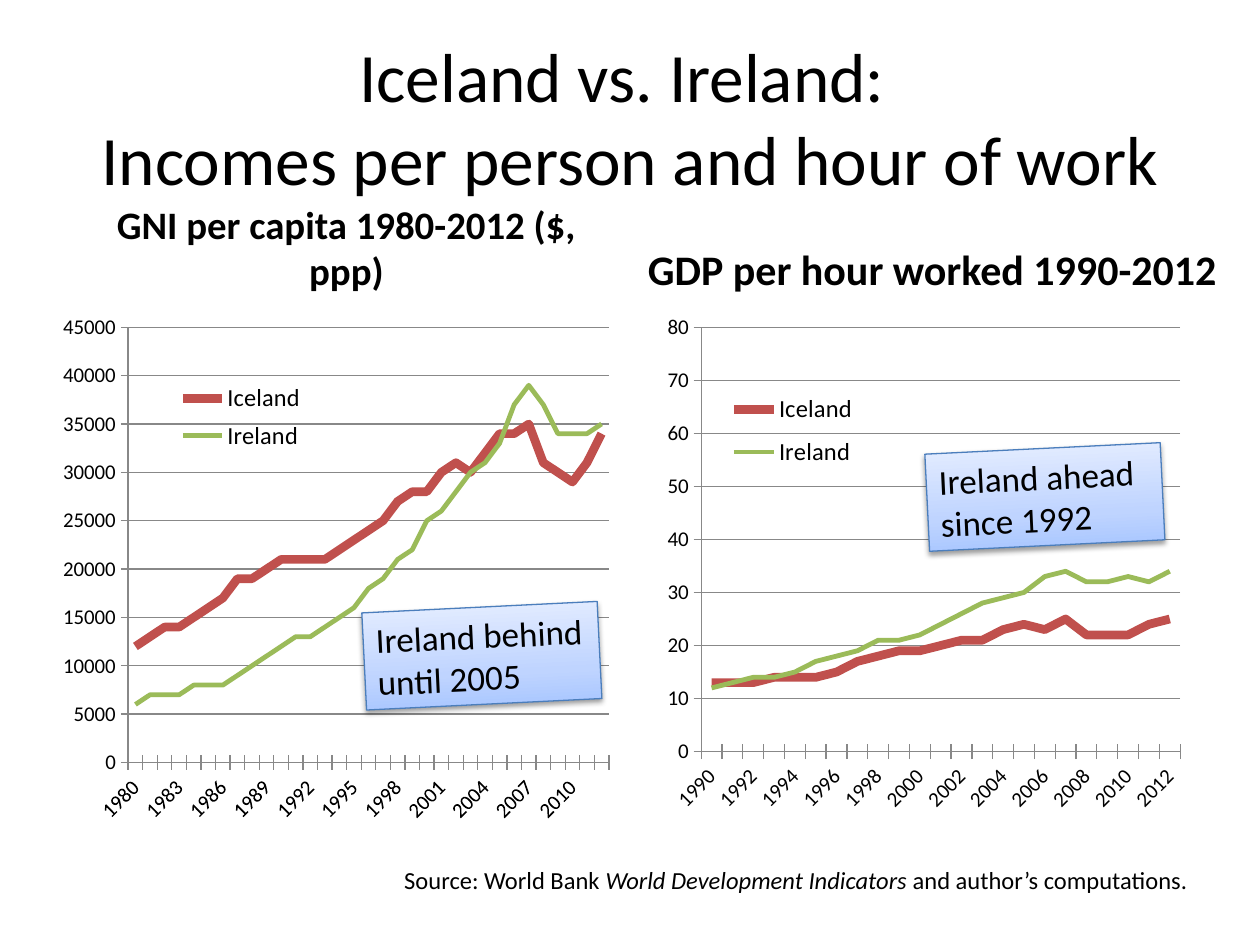
"""Builds a slide that compares incomes in Iceland and Ireland with two line charts."""
from lxml.etree import SubElement
from pptx import Presentation
from pptx.chart.data import CategoryChartData
from pptx.dml.color import RGBColor
from pptx.enum.chart import XL_CHART_TYPE as ChartType, XL_LEGEND_POSITION as LegendPos
from pptx.enum.chart import XL_TICK_MARK as TickMark
from pptx.enum.shapes import MSO_SHAPE as Shape
from pptx.enum.text import MSO_ANCHOR as Anchor, MSO_AUTO_SIZE as AutoSize, PP_ALIGN as Align
from pptx.oxml import parse_xml
from pptx.oxml.ns import qn
from pptx.util import Cm, Pt

FONT = "Calibri"
COLORS = {
    "text": "000000", "grid": "888888", "iceland": "C0504D", "ireland": "9BBB59",
    "edge": "4B7EBC", "low": "A4C4FF", "mid": "BFD4FF", "high": "E6EEFF",
}
GNI = {
    "Iceland": [12000, 13000, 14000, 14000, 15000, 16000, 17000, 19000, 19000, 20000, 21000,
                21000, 21000, 21000, 22000, 23000, 24000, 25000, 27000, 28000, 28000, 30000,
                31000, 30000, 32000, 34000, 34000, 35000, 31000, 30000, 29000, 31000, 34000],
    "Ireland": [6000, 7000, 7000, 7000, 8000, 8000, 8000, 9000, 10000, 11000, 12000,
                13000, 13000, 14000, 15000, 16000, 18000, 19000, 21000, 22000, 25000, 26000,
                28000, 30000, 31000, 33000, 37000, 39000, 37000, 34000, 34000, 34000, 35000],
}
GDP = {
    "Iceland": [13, 13, 13, 14, 14, 14, 15, 17, 18, 19, 19, 20,
                21, 21, 23, 24, 23, 25, 22, 22, 22, 24, 25],
    "Ireland": [12, 13, 14, 14, 15, 17, 18, 19, 21, 21, 22, 24,
                26, 28, 29, 30, 33, 34, 32, 32, 33, 32, 34],
}


def color(name):
    """Return a named colour."""
    return RGBColor.from_string(COLORS[name])


def style(font, size, bold=None):
    """Set the common font with a size and weight."""
    font.name, font.size, font.bold = FONT, Pt(size), bold
    font.color.rgb = color("text")


def fill_placeholder(sp, text, box, size, anchor, bold=None):
    """Move a placeholder and give it centred text."""
    sp.left, sp.top, sp.width, sp.height = (Cm(v) for v in box)
    tf = sp.text_frame
    tf.text = text
    tf.auto_size = AutoSize.NONE
    tf.vertical_anchor = anchor
    p = tf.paragraphs[0]
    p.alignment = Align.CENTER
    for r in p.runs:
        style(r.font, size, bold)


def add_source(s, parts, box):
    """Add the source line, with every second part in italics."""
    tf = s.shapes.add_textbox(*(Cm(v) for v in box)).text_frame
    tf.word_wrap = False
    tf.auto_size = AutoSize.SHAPE_TO_FIT_TEXT
    for i, part in enumerate(parts):
        r = tf.paragraphs[0].add_run()
        r.text = part
        style(r.font, 14)
        r.font.italic = i % 2 == 1


def set_layout(parent, index, box, inner=False):
    """Fix the place of a plot area or legend as fractions of the chart."""
    for old in parent.findall(qn("c:layout")):
        parent.remove(old)
    layout = parent.makeelement(qn("c:layout"))
    parent.insert(index, layout)
    manual = SubElement(layout, qn("c:manualLayout"))
    pairs = [("layoutTarget", "inner")] if inner else []
    pairs += [("xMode", "edge"), ("yMode", "edge"), *zip("xywh", box)]
    for tag, value in pairs:
        SubElement(manual, qn(f"c:{tag}")).set("val", str(value))


def style_axis(axis):
    """Set the tick labels, tick marks and line of an axis."""
    style(axis.tick_labels.font, 12)
    axis.major_tick_mark = TickMark.CROSS
    axis.format.line.color.rgb = color("grid")
    axis.format.line.width = Pt(0.75)


def add_line_chart(s, left, first_year, series, top_value, step, skip, plot, legend):
    """Add a line chart of both countries with yearly categories."""
    data = CategoryChartData(number_format="0")
    years = len(series["Iceland"])
    data.categories = [str(first_year + i) for i in range(years)]
    for name, values in series.items():
        data.add_series(name, values)
    box = (Cm(v) for v in (left, 6.05, 11.23, 10.97))
    chart = s.shapes.add_chart(ChartType.LINE, *box, data).chart
    style(chart.font, 10)
    chart.has_title = False

    for line, width in zip(chart.plots[0].series, (5, 2.75)):
        line.smooth = False
        line.format.line.color.rgb = color(line.name.lower())
        line.format.line.width = Pt(width)

    cat, val = chart.category_axis, chart.value_axis
    style_axis(cat)
    style_axis(val)
    val.minimum_scale, val.maximum_scale, val.major_unit = 0, top_value, step
    val.tick_labels.number_format = "0"
    val.tick_labels.number_format_is_linked = False
    val.major_gridlines.format.line.color.rgb = color("grid")
    val.major_gridlines.format.line.width = Pt(0.75)
    ax = cat._element
    ax.find(f"{qn('c:txPr')}/{qn('a:bodyPr')}").set("rot", "-2700000")
    label_skip = ax.makeelement(qn("c:tickLblSkip"), {"val": str(skip)})
    ax.find(qn("c:noMultiLvlLbl")).addprevious(label_skip)

    chart.has_legend = True
    chart.legend.position = LegendPos.RIGHT
    chart.legend.include_in_layout = False
    style(chart.legend.font, 14)
    set_layout(chart.legend._element, 1, legend)
    set_layout(chart._chartSpace.chart.plotArea, 0, plot, inner=True)


def add_callout(s, text, left, top):
    """Add a tilted note with a gradient fill and a soft shadow."""
    sp = s.shapes.add_shape(Shape.RECTANGLE, Cm(left), Cm(top), Cm(4.75), Cm(1.96))
    sp.rotation = 357.2
    sp.fill.gradient()
    sp.fill.gradient_angle = 90
    sp.line.color.rgb = color("edge")
    sp.line.width = Pt(0.75)
    props = sp._element.spPr
    stops = props.find(f"{qn('a:gradFill')}/{qn('a:gsLst')}")
    for stop in list(stops):
        stops.remove(stop)
    for percent, name in ((0, "low"), (35, "mid"), (100, "high")):
        stop = SubElement(stops, qn("a:gs"), pos=str(percent * 1000))
        SubElement(stop, qn("a:srgbClr"), val=COLORS[name])
    props.append(parse_xml(
        '<a:effectLst xmlns:a="http://schemas.openxmlformats.org/drawingml/2006/main">'
        f'<a:outerShdw blurRad="{Pt(3.1)}" dist="{Pt(1.6)}" dir="5400000" rotWithShape="0">'
        f'<a:srgbClr val="{COLORS["text"]}"><a:alpha val="38000"/></a:srgbClr>'
        '</a:outerShdw></a:effectLst>'))
    tf = sp.text_frame
    tf.text = text
    tf.word_wrap = True
    tf.auto_size = AutoSize.SHAPE_TO_FIT_TEXT
    p = tf.paragraphs[0]
    p.alignment = Align.LEFT
    style(p.runs[0].font, 20)


def main():
    """Build and save the slide."""
    prs = Presentation()
    prs.slide_width, prs.slide_height = Cm(25.4), Cm(19.05)
    s = prs.slides.add_slide(prs.slide_layouts[4])
    holders = {sp.placeholder_format.idx: sp for sp in s.placeholders}
    for idx in (2, 4):
        holders[idx]._element.getparent().remove(holders[idx]._element)

    fill_placeholder(holders[0], "Iceland vs. Ireland: \vIncomes per person and hour of work",
                     (1.27, 0.76, 22.86, 3.18), 39.6, Anchor.MIDDLE)
    fill_placeholder(holders[1], "GNI per capita 1980-2012 ($, ppp)",
                     (1.27, 4.27, 11.43, 1.78), 22.2, Anchor.BOTTOM, True)
    fill_placeholder(holders[3], "GDP per hour worked 1990-2012",
                     (12.7, 4.27, 12.19, 1.78), 24, Anchor.BOTTOM, True)
    add_source(s, ("Source: World Bank ", "World Development Indicators ",
                   "and author’s computations."), (7.9, 17.32, 16.43, 0.86))

    add_line_chart(s, 1.27, 1980, GNI, 45000, 5000, 3,
                   (0.11, 0.05, 0.87, 0.8), (0.19, 0.14, 0.25, 0.15))
    add_callout(s, "Ireland behind until 2005", 7.34, 12.24)
    add_line_chart(s, 12.9, 1990, GDP, 80, 10, 2,
                   (0.11, 0.05, 0.86, 0.78), (0.15, 0.15, 0.25, 0.18))
    add_callout(s, "Ireland ahead since 1992", 18.69, 9.04)
    prs.save("out.pptx")


if __name__ == "__main__":
    main()
